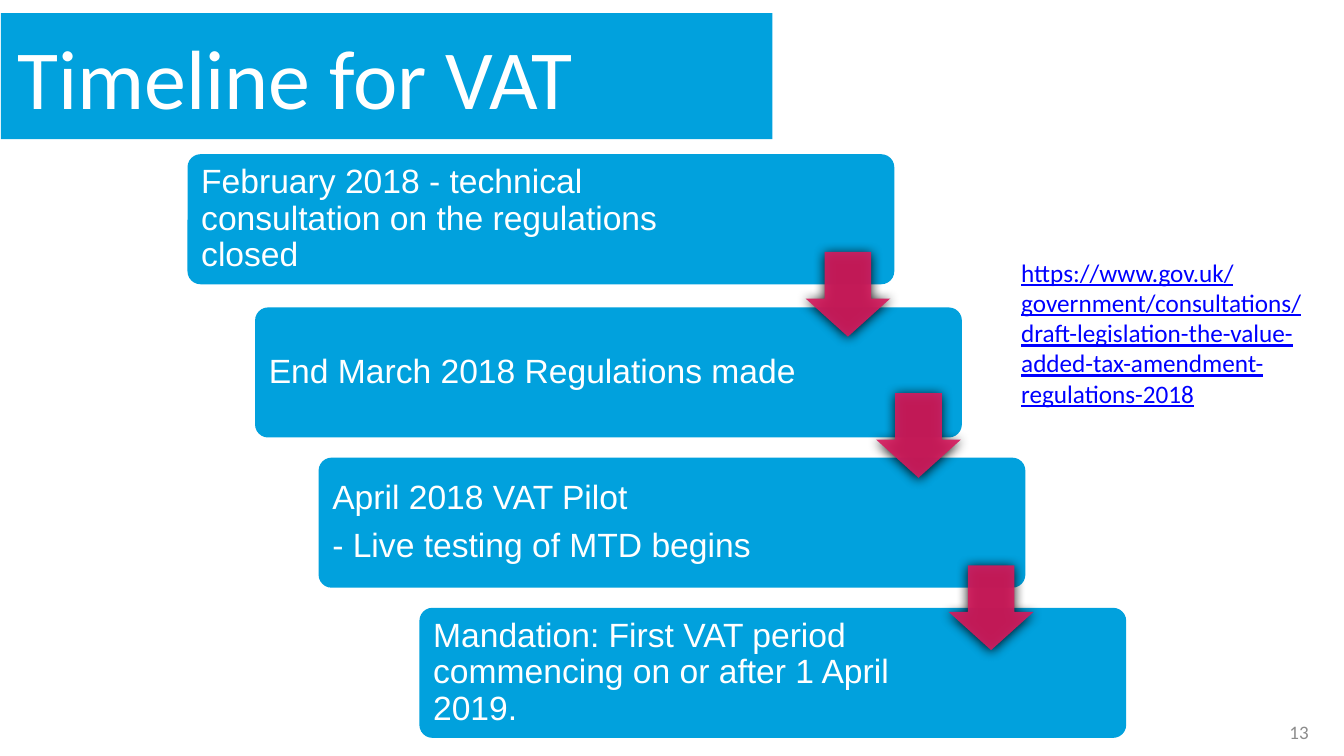
from dataclasses import dataclass

import pptx
import pptx.dml.color
import pptx.enum.shapes
import pptx.enum.text
import pptx.oxml
import pptx.oxml.ns
import pptx.util

Inches = pptx.util.Inches
Pt = pptx.util.Pt
ALIGN = pptx.enum.text.PP_ALIGN
ANCHOR = pptx.enum.text.MSO_ANCHOR
AUTO_SIZE = pptx.enum.text.MSO_AUTO_SIZE
PRESET = pptx.enum.shapes.MSO_SHAPE

BLUE = "01A1DD"
CRIMSON = "D61B5E"
WHITE = "FFFFFF"
LINK_BLUE = "0000FF"
GREY = "8C8C8C"

STEP_WIDTH, STEP_HEIGHT = 7.01, 1.29
ARROW_SIZE = 0.84


@dataclass
class Step:
    left: float
    top: float
    lines: list[str]


@dataclass
class Arrow:
    left: float
    top: float


STEPS = [
    Step(1.86, 1.53, ["February 2018 - technical consultation on the regulations closed"]),
    Step(2.53, 3.05, ["End March 2018 Regulations made"]),
    Step(3.16, 4.54, ["April 2018 VAT Pilot", "- Live testing of MTD begins"]),
    Step(4.16, 6.03, ["Mandation: First VAT period commencing on or after 1 April 2019."]),
]
ARROWS = [Arrow(7.99, 2.5), Arrow(8.69, 3.9), Arrow(9.41, 5.61)]
CONSULTATION_LINK = (
    "https://www.gov.uk/government/consultations/"
    "draft-legislation-the-value-added-tax-amendment-regulations-2018"
)


def apply(target, formats: dict) -> None:
    for name, value in formats.items():
        setattr(target, name, value)


def paint(color_format, color: str) -> None:
    color_format.rgb = pptx.dml.color.RGBColor.from_string(color)


def fill_solid(shape, color: str) -> None:
    shape.fill.solid()
    paint(shape.fill.fore_color, color)


def set_frame(frame, anchor, insets: tuple[float, float, float, float]) -> None:
    sides = ("margin_left", "margin_top", "margin_right", "margin_bottom")
    apply(frame, {"word_wrap": True, "auto_size": AUTO_SIZE.NONE, "vertical_anchor": anchor})
    apply(frame, {side: Inches(inset) for side, inset in zip(sides, insets)})


def write(frame, lines: list[str], font: dict, color: str, paragraph_format: dict) -> None:
    frame.text = "\n".join(lines)
    for paragraph in frame.paragraphs:
        apply(paragraph, paragraph_format)
        for run in paragraph.runs:
            apply(run.font, font)
            paint(run.font.color, color)


def add_step(slide, step: Step) -> None:
    box = slide.shapes.add_shape(
        PRESET.ROUNDED_RECTANGLE,
        Inches(step.left), Inches(step.top), Inches(STEP_WIDTH), Inches(STEP_HEIGHT),
    )
    box.adjustments[0] = 0.1
    box.shadow.inherit = False
    fill_solid(box, BLUE)
    box.line.fill.background()
    set_frame(box.text_frame, ANCHOR.MIDDLE, (0.1, 0.1, 1.42, 0.1))
    write(
        box.text_frame, step.lines, {"name": "Arial", "size": Pt(24)}, WHITE,
        {"alignment": ALIGN.LEFT, "line_spacing": 0.9, "space_after": Pt(8.4)},
    )


def add_arrow(slide, arrow: Arrow) -> None:
    shape = slide.shapes.add_shape(
        PRESET.DOWN_ARROW,
        Inches(arrow.left), Inches(arrow.top), Inches(ARROW_SIZE), Inches(ARROW_SIZE),
    )
    shape.adjustments[0] = 0.55
    shape.adjustments[1] = 0.45
    shape.line.fill.background()
    fill_solid(shape, CRIMSON)
    properties = shape.fill._xPr
    color = properties.find(".//" + pptx.oxml.ns.qn("a:srgbClr"))
    color.append(pptx.oxml.parse_xml(f'<a:alpha {pptx.oxml.ns.nsdecls("a")} val="90000"/>'))
    properties.append(pptx.oxml.parse_xml(
        f'<a:effectLst {pptx.oxml.ns.nsdecls("a")}>'
        f'<a:outerShdw blurRad="{Pt(8.5)}" dist="{Pt(1)}" dir="5400000" rotWithShape="0">'
        '<a:srgbClr val="000000"/></a:outerShdw></a:effectLst>'
    ))


def add_title(slide) -> None:
    title = slide.shapes.title
    apply(title, {
        "left": Inches(0.01), "top": Inches(0.13),
        "width": Inches(7.65), "height": Inches(1.25),
    })
    fill_solid(title, BLUE)
    set_frame(title.text_frame, ANCHOR.MIDDLE, (0.16, 0.08, 0.16, 0.08))
    write(
        title.text_frame, ["Timeline for VAT"], {"name": "Calibri", "size": Pt(60)}, WHITE,
        {"alignment": ALIGN.LEFT},
    )


def add_side_text(slide, top: float, height: float, text: str, anchor,
                  insets: tuple[float, float, float, float],
                  font: dict, color: str, alignment) -> None:
    box = slide.shapes.add_textbox(Inches(10.03), Inches(top), Inches(3.11), Inches(height))
    set_frame(box.text_frame, anchor, insets)
    write(box.text_frame, [text], {"name": "Calibri"} | font, color, {"alignment": alignment})


def main() -> None:
    deck = pptx.Presentation()
    apply(deck, {"slide_width": Inches(13.33), "slide_height": Inches(7.5)})
    slide = deck.slides.add_slide(deck.slide_layouts[5])
    add_title(slide)
    add_side_text(
        slide, 7.06, 0.4, "13", ANCHOR.MIDDLE, (0.16, 0.08, 0.16, 0.08),
        {"size": Pt(13.6)}, GREY, ALIGN.RIGHT,
    )
    for step in STEPS:
        add_step(slide, step)
    for arrow in ARROWS:
        add_arrow(slide, arrow)
    add_side_text(
        slide, 2.5, 1.62, CONSULTATION_LINK, ANCHOR.TOP, (0.1, 0.05, 0.1, 0.05),
        {"size": Pt(18), "underline": True}, LINK_BLUE, ALIGN.LEFT,
    )
    deck.save("out.pptx")


if __name__ == "__main__":
    main()
